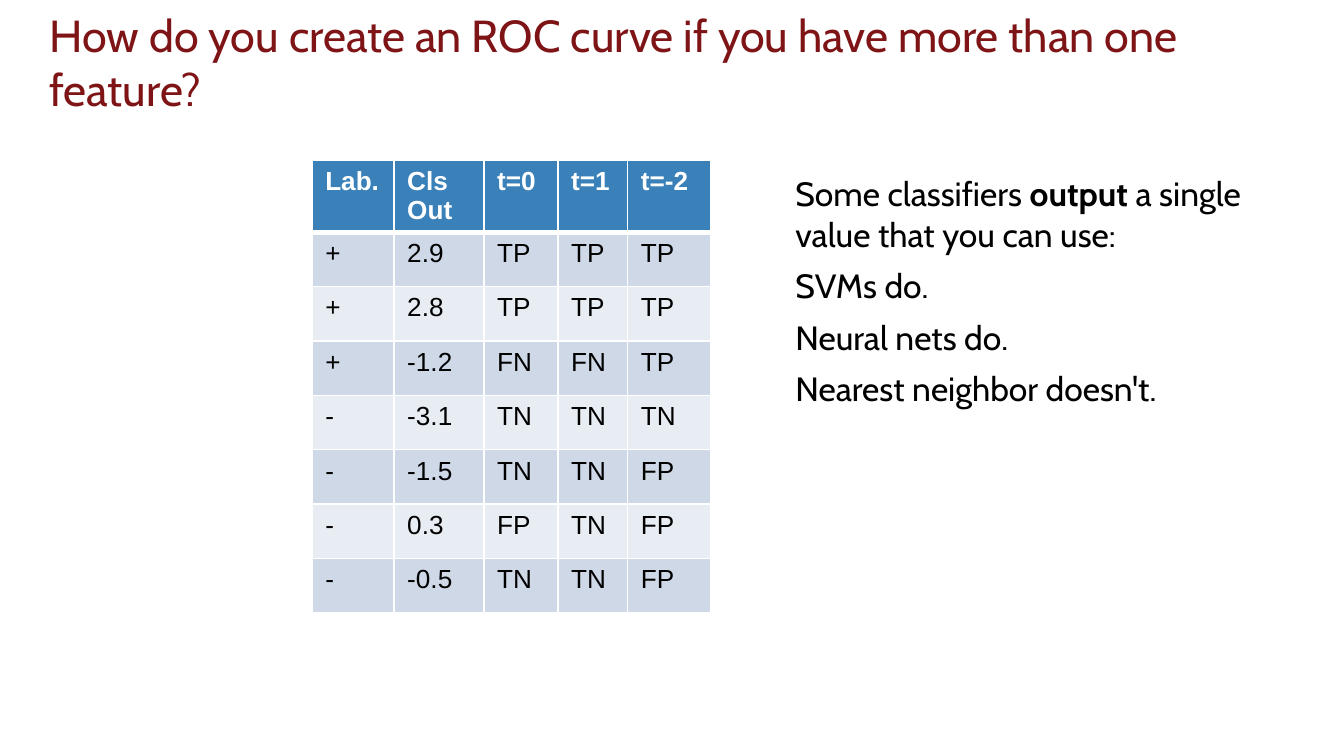
from lxml import etree
from pptx import Presentation
from pptx import util as u
from pptx.dml.color import RGBColor
from pptx.enum import text
from pptx.oxml import ns

BLACK = RGBColor(0, 0, 0)
WHITE = RGBColor(255, 255, 255)
TITLE_RED = RGBColor(0x7F, 0x14, 0x16)
HEADER_BLUE = RGBColor(0x3A, 0x81, 0xBA)
ROW_BLUE = RGBColor(0xCE, 0xD8, 0xE7)
ROW_PALE = RGBColor(0xE8, 0xED, 0xF3)

TITLE = "How do you create an ROC curve if you have more than one feature?"
NOTES = [
    [("Some classifiers ", False), ("output ", True), ("a single value that you can use:", False)],
    [("SVMs do.", False)],
    [("Neural nets do.", False)],
    [("Nearest neighbor doesn't.", False)],
]
COLUMN_WIDTHS = [0.61, 0.67, 0.55, 0.52, 0.62]
ROWS = [
    ["Lab.", "Cls Out", "t=0", "t=1", "t=-2"],
    ["+", "2.9", "TP", "TP", "TP"],
    ["+", "2.8", "TP", "TP", "TP"],
    ["+", "-1.2", "FN", "FN", "TP"],
    ["-", "-3.1", "TN", "TN", "TN"],
    ["-", "-1.5", "TN", "TN", "FP"],
    ["-", "0.3", "FP", "TN", "FP"],
    ["-", "-0.5", "TN", "TN", "FP"],
]


def set_font(font, name, size, color):
    """Set the typeface, point size and colour of a font."""
    font.name = name
    font.size = u.Pt(size)
    font.color.rgb = color


def add_text(slide, box, paragraphs, size, color, anchor):
    """Add a wrapped text box whose paragraphs are lists of (words, bold)."""
    shape = slide.shapes.add_textbox(*map(u.Inches, box))
    frame = shape.text_frame
    frame.word_wrap = True
    frame.vertical_anchor = anchor
    frame.margin_left = frame.margin_right = u.Inches(0.1)
    frame.margin_top = frame.margin_bottom = u.Inches(0.1)
    for index, runs in enumerate(paragraphs):
        paragraph = frame.paragraphs[0]
        if index:
            paragraph = frame.add_paragraph()
            paragraph.space_before = u.Pt(6)
        set_font(paragraph.font, "Cabin", size, color)
        for words, bold in runs:
            run = paragraph.add_run()
            run.text = words
            if bold:
                run.font.bold = True


def set_borders(cell, top, bottom):
    """Draw white cell borders with the given top and bottom widths in points."""
    properties = cell._tc.get_or_add_tcPr()
    for side, width in (("L", 1), ("R", 1), ("T", top), ("B", bottom)):
        line = etree.SubElement(properties, ns.qn(f"a:ln{side}"), w=str(u.Pt(width)))
        fill = etree.SubElement(line, ns.qn("a:solidFill"))
        etree.SubElement(fill, ns.qn("a:srgbClr"), val=str(WHITE))


def add_results_table(slide, left, top, height):
    """Add the table of classifier outputs and outcomes per threshold."""
    table = slide.shapes.add_table(
        len(ROWS), len(COLUMN_WIDTHS), u.Inches(left), u.Inches(top),
        u.Inches(sum(COLUMN_WIDTHS)), u.Inches(height)).table
    for column, width in zip(table.columns, COLUMN_WIDTHS):
        column.width = u.Inches(width)
    for row, values in enumerate(ROWS):
        header = row == 0
        band = ROW_BLUE if row % 2 else ROW_PALE
        for column, value in enumerate(values):
            cell = table.cell(row, column)
            set_borders(cell, 3 if row == 1 else 1, 3 if header else 1)
            cell.margin_right = u.Inches(0.05)
            cell.margin_bottom = u.Inches(0.02)
            cell.fill.solid()
            cell.fill.fore_color.rgb = HEADER_BLUE if header else band
            cell.text = value
            font = cell.text_frame.paragraphs[0].font
            set_font(font, "Arial", 14, WHITE if header else BLACK)
            font.bold = header


def main():
    """Build the ROC curve slide and save it."""
    presentation = Presentation()
    presentation.slide_width = u.Inches(10)
    presentation.slide_height = presentation.slide_width * 9 // 16
    slide = presentation.slides.add_slide(presentation.slide_layouts[6])
    add_text(slide, (0.27, 0.07, 9.44, 0.89), [[(TITLE, False)]], 24, TITLE_RED,
             text.MSO_ANCHOR.BOTTOM)
    add_text(slide, (5.82, 1.19, 3.9, 3.16), NOTES, 18, BLACK, text.MSO_ANCHOR.TOP)
    add_results_table(slide, 2.32, 1.19, 3.24)
    presentation.save("out.pptx")


if __name__ == "__main__":
    main()
